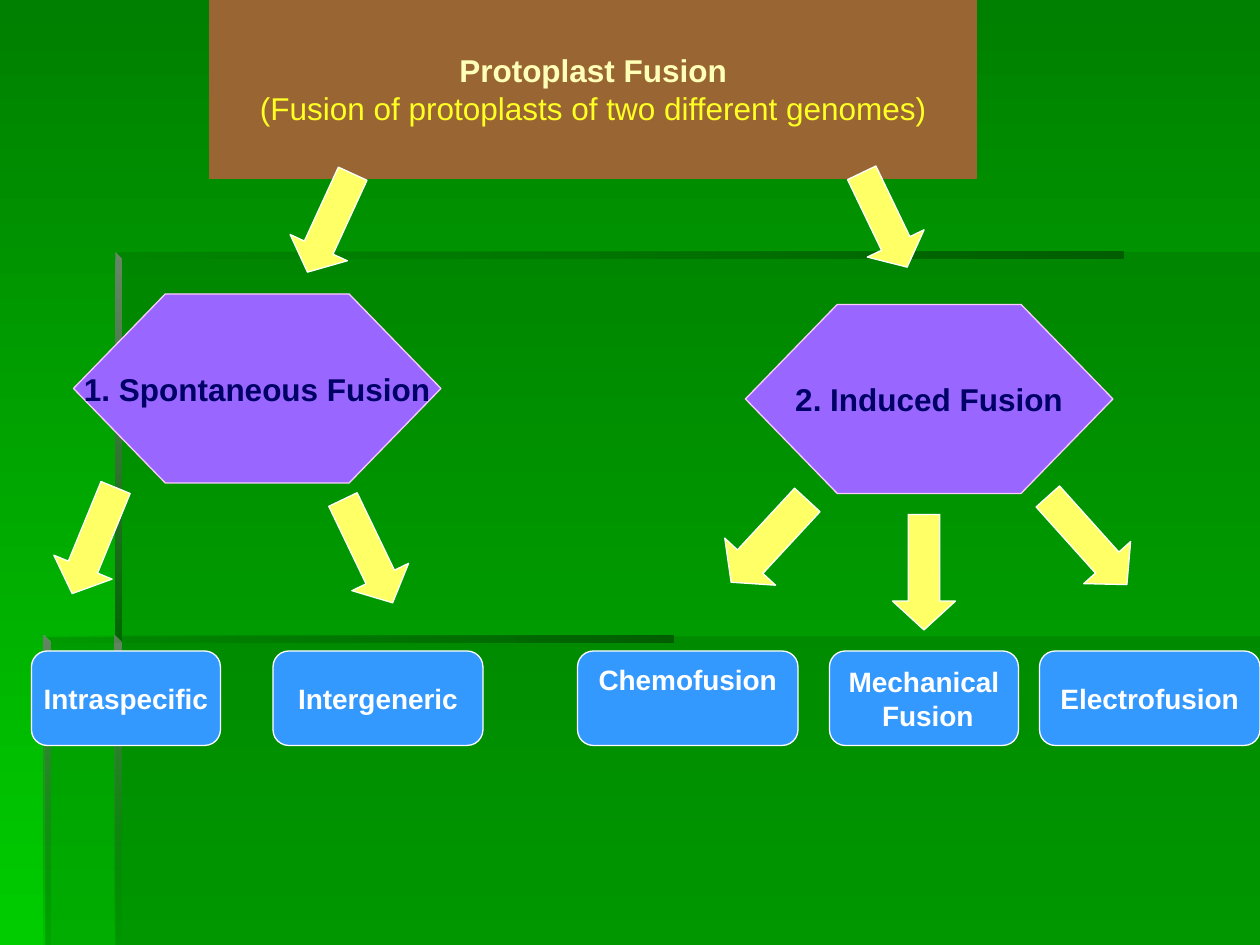
import pptx
import pptx.util
import pptx.dml.color
import pptx.enum.shapes
import pptx.enum.text
import pptx.oxml
import pptx.oxml.ns

Pt = pptx.util.Pt
RGB = pptx.dml.color.RGBColor
SHAPE = pptx.enum.shapes.MSO_SHAPE
A_NS = pptx.oxml.ns.nsdecls("a")

WIDTH, HEIGHT = 720, 540
BROWN = RGB(0x99, 0x66, 0x33)
CREAM = RGB(0xFF, 0xFF, 0xB7)
BRIGHT_YELLOW = RGB(0xFF, 0xFF, 0x23)
PURPLE = RGB(0x99, 0x66, 0xFF)
PINK = RGB(0xFF, 0xCC, 0xFF)
NAVY = RGB(0x00, 0x00, 0x66)
BLUE = RGB(0x33, 0x99, 0xFF)
WHITE = RGB(0xFF, 0xFF, 0xFF)
YELLOW = RGB(0xFF, 0xFF, 0x66)
BG_TOP = RGB(0x00, 0x80, 0x00)
BG_BOTTOM = RGB(0x00, 0xCC, 0x00)
SHADE = RGB(0x00, 0x66, 0x00)
SHADE_DARK = RGB(0x00, 0x5E, 0x00)
SHADE_GREY = RGB(0x66, 0x86, 0x66)

TITLE = [("Protoplast Fusion", CREAM, True),
         ("(Fusion of protoplasts of two different genomes)", BRIGHT_YELLOW, False)]
TITLE_BOX = (120, 0, 438, 102)

# text, left, top
FUSION_TYPES = [("1. Spontaneous Fusion", 42, 168), ("2. Induced Fusion", 426, 174)]
HEX_SIZE = (210, 108)

# lines, left, width, bottom inset
METHODS = [
    (["Intraspecific"], 18, 108, 3.6),
    (["Intergeneric"], 156, 120, 3.6),
    (["Electrofusion"], 594, 126, 3.6),
    (["Mechanical", " Fusion"], 474, 108, 3.6),
    (["Chemofusion"], 330, 126, 25.2),
]
METHOD_TOP, METHOD_HEIGHT = 372, 54

# shape, box, rotation, head length
ARROWS = [
    (SHAPE.LEFT_ARROW, (20.9, 290.9, 65.5, 36), 292.3, 0.454),
    (SHAPE.LEFT_ARROW, (407.5, 289.4, 64.1, 39.6), 312.8, 0.405),
    (SHAPE.DOWN_ARROW, (192.2, 282.2, 36, 65.5), 334.3, 0.454),
    (SHAPE.DOWN_ARROW, (510, 294, 36, 66), 0, 0.458),
    (SHAPE.DOWN_ARROW, (603.4, 275, 36, 67.7), 318.1, 0.469),
    (SHAPE.LEFT_ARROW, (157.7, 109.4, 61.9, 36), 294.7, 0.429),
    (SHAPE.DOWN_ARROW, (487.4, 95.8, 36, 59.8), 334.3, 0.417),
]

PANELS = [
    [(66, 363.6), (66, HEIGHT), (WIDTH, HEIGHT), (WIDTH, 363.6)],
    [(67.5, 364), (26, 364), (26, HEIGHT), (WIDTH, HEIGHT), (WIDTH, 144), (67.5, 144)],
]
PANEL_OPACITY = 30

# left, top, length, angle (0 across, 90 down), (colour, opacity) at start and end
BARS = [
    (66, 144, 576, 0, (SHADE, 0), (SHADE_DARK, 100)),
    (66, 144, 223, 90, (SHADE_GREY, 100), (SHADE, 100)),
    (65.5, 363, 177, 90, (SHADE_GREY, 100), (SHADE, 0)),
    (25, 363, 360, 0, (SHADE, 0), (SHADE_DARK, 100)),
    (25, 363, 177, 90, (SHADE_GREY, 100), (SHADE, 10)),
]
BAR_THICKNESS = 4


def set_gradient(fill, props, angle, stops):
    """Fill a shape or background with a linear gradient, including opacity."""
    fill.gradient()
    old = props.find(pptx.oxml.ns.qn("a:gradFill"))
    gs = "".join(
        f'<a:gs pos="{i * 100000}"><a:srgbClr val="{colour}">'
        f'<a:alpha val="{opacity * 1000}"/></a:srgbClr></a:gs>'
        for i, (colour, opacity) in enumerate(stops))
    new = pptx.oxml.parse_xml(
        f'<a:gradFill {A_NS} rotWithShape="1"><a:gsLst>{gs}</a:gsLst>'
        f'<a:lin ang="{angle * 60000}" scaled="0"/></a:gradFill>')
    props.replace(old, new)


def add_polygon(s, points):
    pts = [(Pt(x), Pt(y)) for x, y in points]
    builder = s.shapes.build_freeform(*pts[0], scale=1.0)
    builder.add_line_segments(pts[1:], close=True)
    sp = builder.convert_to_shape()
    sp.shadow.inherit = False
    sp.line.fill.background()
    return sp


def add_bar(s, x, y, length, angle, start, end):
    t = BAR_THICKNESS
    if angle:
        points = [(x, y), (x, y + length), (x + t, y + length), (x + t, y + t)]
    else:
        points = [(x, y), (x, y + t), (x + length, y + t), (x + length, y)]
    sp = add_polygon(s, points)
    set_gradient(sp.fill, sp._element.spPr, angle, (start, end))


def paint(sp, fill, line):
    sp.fill.solid()
    sp.fill.fore_color.rgb = fill
    sp.line.color.rgb = line
    sp.line.width = Pt(0.75)


def add_shape(s, kind, box, fill, line, adjustments):
    sp = s.shapes.add_shape(kind, *map(Pt, box))
    sp.shadow.inherit = False
    paint(sp, fill, line)
    for i, value in enumerate(adjustments):
        sp.adjustments[i] = value
    return sp


def write(sp, lines, size, bottom=3.6):
    """Write (text, colour, bold) lines, centred in the shape."""
    tf = sp.text_frame
    tf.auto_size = pptx.enum.text.MSO_AUTO_SIZE.NONE
    tf.word_wrap = False
    tf.vertical_anchor = pptx.enum.text.MSO_ANCHOR.MIDDLE
    tf.margin_bottom = Pt(bottom)
    for i, (text, colour, bold) in enumerate(lines):
        p = tf.add_paragraph() if i else tf.paragraphs[0]
        p.alignment = pptx.enum.text.PP_ALIGN.CENTER
        r = p.add_run()
        r.text = text
        r.font.name = "Arial"
        r.font.size = Pt(size)
        r.font.bold = bold
        r.font.color.rgb = colour


def add_title(s):
    sp = s.shapes.title
    sp.left, sp.top, sp.width, sp.height = map(Pt, TITLE_BOX)
    sp._element.spPr.insert(1, pptx.oxml.parse_xml(
        f'<a:prstGeom {A_NS} prst="ellipse"><a:avLst/></a:prstGeom>'))
    paint(sp, BROWN, BROWN)
    write(sp, TITLE, 18)


def main():
    prs = pptx.Presentation()
    prs.slide_width, prs.slide_height = Pt(WIDTH), Pt(HEIGHT)
    s = prs.slides.add_slide(prs.slide_layouts[5])
    fill = s.background.fill
    set_gradient(fill, s._element.cSld.bg.bgPr, 90, ((BG_TOP, 100), (BG_BOTTOM, 100)))

    for points in PANELS:
        sp = add_polygon(s, points)
        sp.fill.solid()
        sp.fill.fore_color.rgb = SHADE
        colour = sp._element.spPr.find(".//" + pptx.oxml.ns.qn("a:srgbClr"))
        colour.append(pptx.oxml.parse_xml(
            f'<a:alpha {A_NS} val="{PANEL_OPACITY * 1000}"/>'))
    for bar in BARS:
        add_bar(s, *bar)

    add_title(s)
    for text, left, top in FUSION_TYPES:
        sp = add_shape(s, SHAPE.HEXAGON, (left, top, *HEX_SIZE), PURPLE, PINK, (0.486, 1.155))
        write(sp, [(text, NAVY, True)], 18)
    for lines, left, width, bottom in METHODS:
        box = (left, METHOD_TOP, width, METHOD_HEIGHT)
        sp = add_shape(s, SHAPE.ROUNDED_RECTANGLE, box, BLUE, WHITE, (0.167,))
        write(sp, [(text, WHITE, True) for text in lines], 16, bottom)
    for kind, box, rotation, head in ARROWS:
        sp = add_shape(s, kind, box, YELLOW, WHITE, (0.5, head))
        sp.rotation = rotation

    prs.save("out.pptx")


if __name__ == "__main__":
    main()
